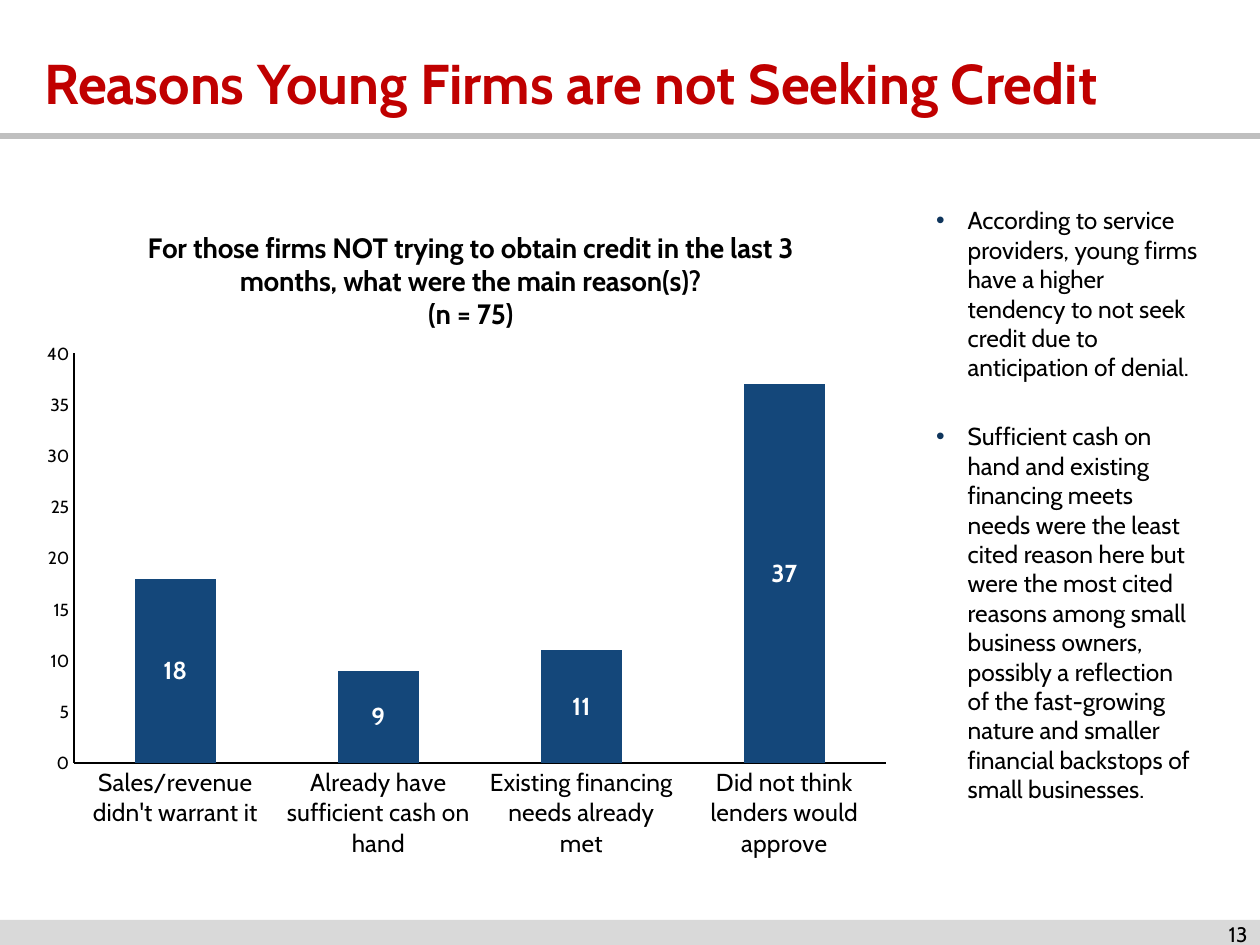
from lxml import etree
from pptx import Presentation
from pptx.chart.data import CategoryChartData
from pptx.dml.color import RGBColor
from pptx.enum.chart import XL_CHART_TYPE, XL_LABEL_POSITION, XL_TICK_MARK
from pptx.enum.shapes import MSO_CONNECTOR, MSO_SHAPE
from pptx.enum.text import MSO_ANCHOR, MSO_AUTO_SIZE, PP_ALIGN
from pptx.oxml.ns import qn
from pptx.util import Inches, Pt

# Content
TITLE = "Reasons Young Firms are not Seeking Credit"
BULLETS = [
    "According to service providers, young firms have a higher tendency to not seek "
    "credit due to anticipation of denial.",
    "Sufficient cash on hand and existing financing meets needs were the least cited "
    "reason here but were the most cited reasons among small business owners, possibly "
    "a reflection of the fast-growing nature and smaller financial backstops of small "
    "businesses.",
]
CHART_TITLE = (
    "For those firms NOT trying to obtain credit in the last 3 months, "
    "what were the main reason(s)?\n(n = 75)"
)
REASONS = [
    ("Sales/revenue didn't warrant it", 18),
    ("Already have sufficient cash on hand", 9),
    ("Existing financing needs already met", 11),
    ("Did not think lenders would approve", 37),
]
PAGE_NUMBER = "13"

FONT = "Cabin"
COLORS = {
    "title": "C00000", "text": "000000", "bullet": "0F355C", "bar": "14477A",
    "label": "FFFFFF", "rule": "BFBFBF", "footer": "D9D9D9",
}


def color(name):
    return RGBColor.from_string(COLORS[name])


def style_font(font, size, color_name="text", bold=False):
    font.name = FONT
    font.size = Pt(size)
    font.bold = bold
    font.color.rgb = color(color_name)


def place(shape, left, top, width, height):
    shape.left, shape.top = Inches(left), Inches(top)
    shape.width, shape.height = Inches(width), Inches(height)


def add_bullet(paragraph):
    properties = paragraph._p.get_or_add_pPr()
    properties.set("marL", str(Inches(0.25)))
    properties.set("indent", str(-Inches(0.25)))
    bullet_color = etree.SubElement(properties, qn("a:buClr"))
    etree.SubElement(bullet_color, qn("a:srgbClr"), val=COLORS["bullet"])
    etree.SubElement(properties, qn("a:buFont"), typeface="Arial")
    etree.SubElement(properties, qn("a:buChar"), char="•")


def set_layout(parent, successor, **values):
    """Fix a chart part's position, as fractions of the chart."""
    for old_layout in parent.findall(qn("c:layout")):
        parent.remove(old_layout)
    layout = etree.Element(qn("c:layout"))
    manual = etree.SubElement(layout, qn("c:manualLayout"))
    for name, value in values.items():
        etree.SubElement(manual, qn(f"c:{name}"), val=str(value))
    parent.find(qn(successor)).addprevious(layout)


presentation = Presentation()
presentation.slide_width, presentation.slide_height = Inches(10), Inches(7.5)
slide = presentation.slides.add_slide(presentation.slide_layouts[1])

# Footer band and header rule
footer = slide.shapes.add_shape(
    MSO_SHAPE.RECTANGLE, Inches(0), Inches(7.3), Inches(10), Inches(0.2))
footer.shadow.inherit = False
footer.fill.solid()
footer.fill.fore_color.rgb = color("footer")
footer.line.fill.background()

rule = slide.shapes.add_connector(
    MSO_CONNECTOR.STRAIGHT, Inches(0), Inches(1.08), Inches(10), Inches(1.08))
rule.line.color.rgb = color("rule")
rule.line.width = Pt(3)
etree.SubElement(rule._element.spPr, qn("a:effectLst"))

# Title
title = slide.shapes.title
place(title, 0.25, 0.32, 9.6, 0.67)
title.text_frame.text = TITLE
title.text_frame.auto_size = MSO_AUTO_SIZE.NONE
title.text_frame.vertical_anchor = MSO_ANCHOR.MIDDLE
title.text_frame.paragraphs[0].alignment = PP_ALIGN.LEFT
style_font(title.text_frame.paragraphs[0].runs[0].font, 32, "title", True)

# Commentary
body = slide.placeholders[1]
place(body, 7.33, 1.58, 2.29, 4.92)
body.text_frame.text = "\n".join(BULLETS)
body.text_frame.auto_size = MSO_AUTO_SIZE.NONE
for index, paragraph in enumerate(body.text_frame.paragraphs):
    paragraph.space_before = Pt(22.5 if index else 2.8)
    add_bullet(paragraph)
    style_font(paragraph.runs[0].font, 14)

# Page number
number = slide.shapes.add_textbox(Inches(7.67), Inches(7.33), Inches(2.33), Inches(0.17))
number.text_frame.word_wrap = True
number.text_frame.vertical_anchor = MSO_ANCHOR.MIDDLE
number.text_frame.text = PAGE_NUMBER
number.text_frame.paragraphs[0].alignment = PP_ALIGN.RIGHT
style_font(number.text_frame.paragraphs[0].runs[0].font, 12)

# Column chart
chart_data = CategoryChartData()
chart_data.categories = [reason for reason, count in REASONS]
chart_data.add_series("Series 1", [count for reason, count in REASONS])
chart = slide.shapes.add_chart(
    XL_CHART_TYPE.COLUMN_CLUSTERED, Inches(0.24), Inches(1.58),
    Inches(6.93), Inches(5.33), chart_data).chart
style_font(chart.font, 10)
chart.has_legend = False
chart.has_title = True
chart.chart_title.text_frame.text = CHART_TITLE
for paragraph in chart.chart_title.text_frame.paragraphs:
    style_font(paragraph.runs[0].font, 16, bold=True)
chart.chart_title.include_in_layout = False
set_layout(chart.chart_title._element, "c:overlay",
           xMode="edge", yMode="edge", x=0.13, y=0.04)
set_layout(chart._chartSpace.chart.plotArea, "c:barChart", layoutTarget="inner",
           xMode="edge", yMode="edge", x=0.05, y=0.23, w=0.93, h=0.61)

for axis, size in ((chart.category_axis, 14), (chart.value_axis, 10)):
    axis.has_major_gridlines = False
    axis.major_tick_mark = axis.minor_tick_mark = XL_TICK_MARK.NONE
    axis.format.line.color.rgb = color("text")
    axis.format.line.width = Pt(0.75)
    style_font(axis.tick_labels.font, size)
chart.value_axis.minimum_scale, chart.value_axis.maximum_scale = 0, 40
chart.value_axis.major_unit = 5

plot = chart.plots[0]
plot.vary_by_categories = False
plot.gap_width = 150
series = plot.series[0]
series.format.fill.solid()
series.format.fill.fore_color.rgb = color("bar")
labels = series.data_labels
labels.show_value = True
labels.position = XL_LABEL_POSITION.CENTER
style_font(labels.font, 14, "label", True)

presentation.save("out.pptx")
